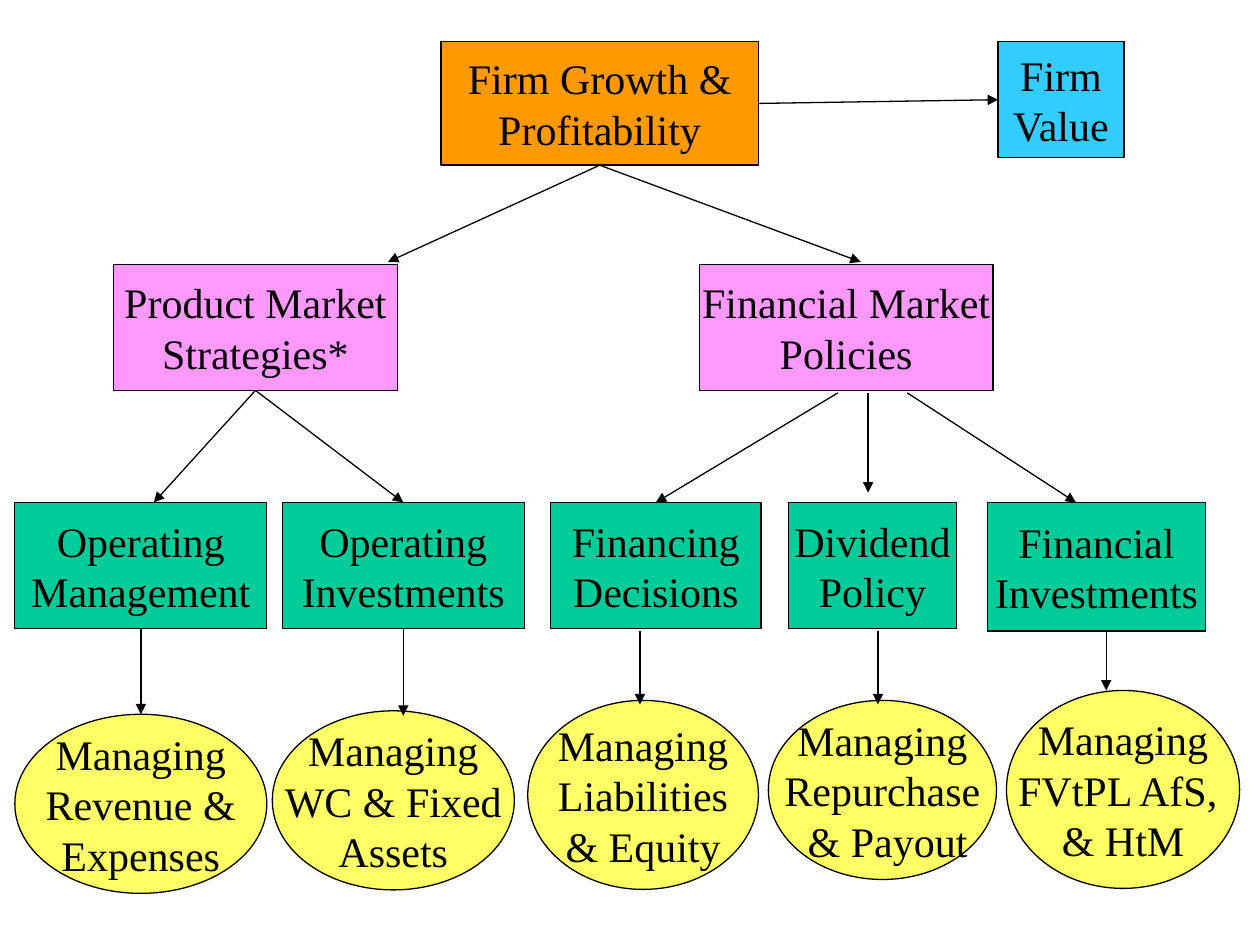
from lxml.etree import SubElement
from pptx import Presentation
from pptx.dml.color import RGBColor
from pptx.enum.shapes import MSO_CONNECTOR, MSO_SHAPE
from pptx.enum.text import MSO_ANCHOR, PP_ALIGN
from pptx.oxml.ns import qn
from pptx.util import Cm, Pt

BLACK = RGBColor(0x00, 0x00, 0x00)
BLUE = RGBColor(0x33, 0xCC, 0xFF)
ORANGE = RGBColor(0xFF, 0x99, 0x00)
PINK = RGBColor(0xFF, 0x99, 0xFF)
GREEN = RGBColor(0x00, 0xCC, 0x99)
YELLOW = RGBColor(0xFF, 0xFF, 0x66)
FONT_FORMAT = {"name": "Times New Roman", "size": Pt(24)}
FRAME_FORMAT = {"word_wrap": False, "vertical_anchor": MSO_ANCHOR.MIDDLE}
TOP, LEFT, BOTTOM, RIGHT = range(4)

presentation = Presentation()
presentation.slide_width = Cm(25.4)
presentation.slide_height = Cm(19.05)
slide = presentation.slides.add_slide(presentation.slide_layouts[6])


def add_node(kind, color, text, *bounds):
    shape = slide.shapes.add_shape(kind, *[Cm(value) for value in bounds])
    shape.shadow.inherit = False
    shape.fill.solid()
    shape.fill.fore_color.rgb = color
    shape.line.color.rgb = BLACK
    shape.line.width = Pt(0.75)
    frame = shape.text_frame
    for name, value in FRAME_FORMAT.items():
        setattr(frame, name, value)
    frame.text = text
    for paragraph in frame.paragraphs:
        paragraph.alignment = PP_ALIGN.CENTER
        for name, value in FONT_FORMAT.items():
            setattr(paragraph.font, name, value)
        paragraph.font.color.rgb = BLACK
    return shape


def add_arrow(start, end, start_box=None, end_box=None):
    points = [Cm(value) for value in (*start, *end)]
    connector = slide.shapes.add_connector(MSO_CONNECTOR.STRAIGHT, *points)
    if start_box:
        connector.begin_connect(*start_box)
    if end_box:
        connector.end_connect(*end_box)
    connector.line.color.rgb = BLACK
    connector.line.width = Pt(0.75)
    SubElement(connector.line._get_or_add_ln(), qn("a:tailEnd"), type="triangle")
    SubElement(connector._element.spPr, qn("a:effectLst"))


boxes = {}
for name, color, text, *bounds in [
    ("value", BLUE, "Firm\nValue", 20.12, 0.84, 2.54, 2.34),
    ("growth", ORANGE, "Firm Growth &\nProfitability", 8.89, 0.84, 6.4, 2.49),
    ("product", PINK, "Product Market\nStrategies*", 2.29, 5.33, 5.72, 2.54),
    ("financial", PINK, "Financial Market\nPolicies", 14.1, 5.33, 5.92, 2.54),
    ("management", GREEN, "Operating\nManagement", 0.3, 10.13, 5.08, 2.54),
    ("operating", GREEN, "Operating\nInvestments", 5.69, 10.13, 4.88, 2.54),
    ("financing", GREEN, "Financing\nDecisions", 11.1, 10.13, 4.24, 2.54),
    ("dividend", GREEN, "Dividend\nPolicy", 15.9, 10.13, 3.38, 2.54),
    ("investments", GREEN, "Financial\nInvestments", 19.91, 10.13, 4.39, 2.59),
]:
    boxes[name] = add_node(MSO_SHAPE.RECTANGLE, color, text, *bounds)

for text, *bounds in [
    ("Managing\nRevenue &\nExpenses", 0.3, 14.4, 5.08, 3.61),
    ("Managing\nWC & Fixed\nAssets", 5.49, 14.33, 4.88, 3.61),
    ("Managing\nLiabilities\n& Equity", 10.64, 14.12, 4.65, 3.81),
    ("Managing\nRepurchase\n & Payout", 15.49, 14.12, 4.6, 3.61),
    ("Managing\nFVtPL AfS, \n& HtM", 20.29, 13.92, 4.7, 3.99),
]:
    add_node(MSO_SHAPE.OVAL, YELLOW, text, *bounds)

growth_bottom = (boxes["growth"], BOTTOM)
product_bottom = (boxes["product"], BOTTOM)

add_arrow((15.29, 2.1), (20.12, 2.1), (boxes["growth"], RIGHT), (boxes["value"], LEFT))
for end in [(7.82, 5.28), (17.35, 5.28)]:
    add_arrow((12.09, 3.33), end, growth_bottom)
add_arrow((5.15, 7.87), (3.1, 10.13), product_bottom)
add_arrow((5.15, 7.87), (8.13, 10.13), product_bottom, (boxes["operating"], TOP))
add_arrow((16.89, 7.92), (13.22, 10.13), None, (boxes["financing"], TOP))
add_arrow((17.5, 7.92), (17.5, 9.93))
add_arrow((18.29, 7.92), (21.69, 10.13))

for x, bottom, box in [
    (2.84, 14.4, "management"),
    (8.13, 14.43, "operating"),
    (12.9, 14.2, None),
    (17.7, 14.2, None),
    (22.3, 13.92, None),
]:
    add_arrow((x, 12.73), (x, bottom), (boxes[box], BOTTOM) if box else None)

presentation.save("out.pptx")
